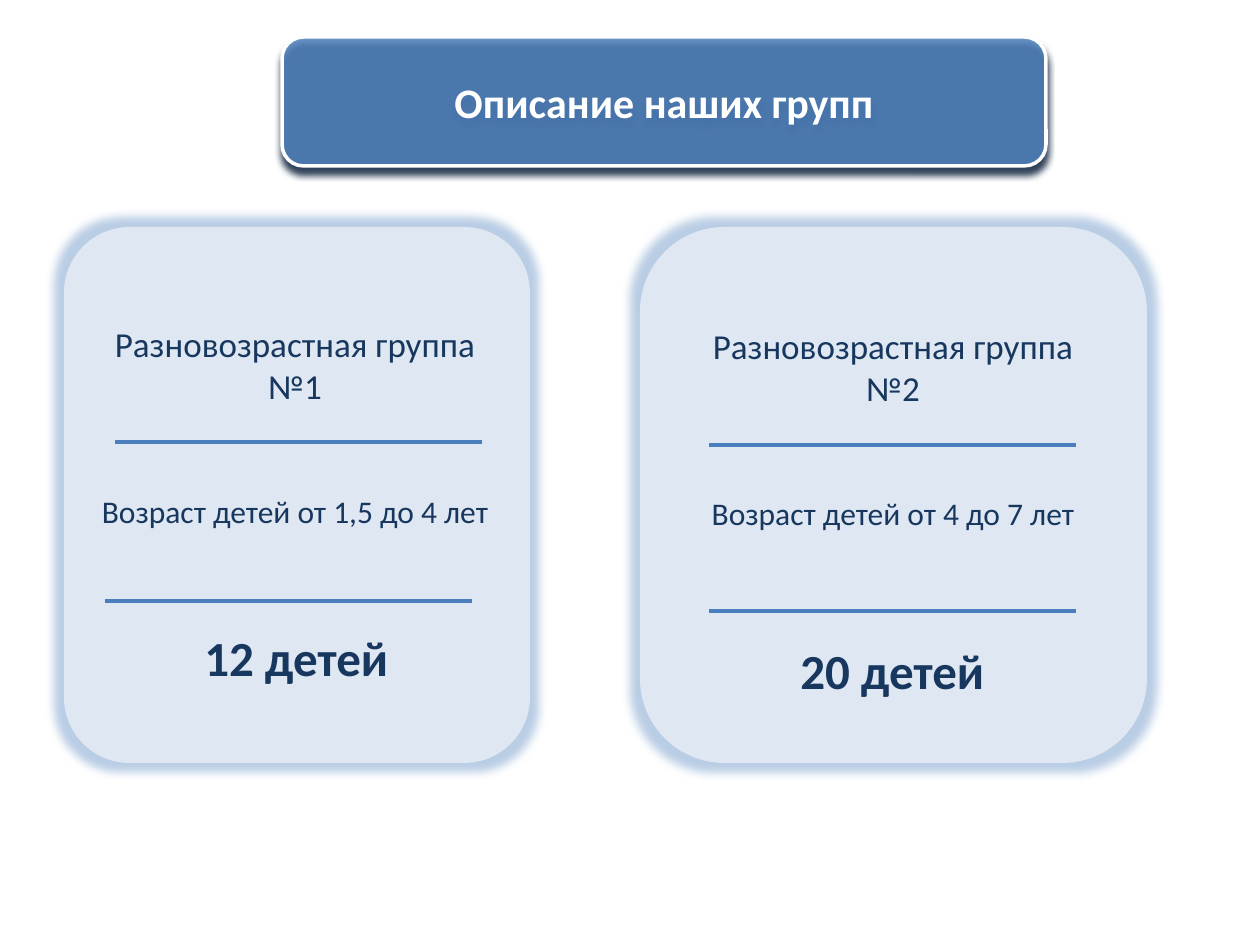
import pptx
import pptx.util
import pptx.dml.color
import pptx.enum.shapes
import pptx.enum.text
from lxml import etree

INK = {"blue": "4F81BD", "rule": "4B7EBC", "card": "F9FBFD", "glow": "B9CDE5",
       "text": "17375E", "shade": "0F243E", "white": "FFFFFF"}
TITLE = "Описание наших групп"
GROUPS = [
    {"card": (64, 227, 466, 536), "round": 0.141,
     "name": "Разновозрастная группа №1", "age": "Возраст детей от 1,5 до 4 лет",
     "info": (79, 316), "count": "12 детей", "total": (192, 621),
     "rules": [(115, 442), (105, 601)]},
    {"card": (640, 227, 507, 536), "round": 0.1667,
     "name": "Разновозрастная группа №2", "age": "Возраст детей от 4 до 7 лет",
     "info": (677, 318), "count": "20 детей", "total": (788, 634),
     "rules": [(709, 445), (709, 611)]},
]
RULE = 367
INFO = (432, 220)
TOTAL = (212, 72)
NS = "http://schemas.openxmlformats.org/drawingml/2006/main"
Pt = pptx.util.Pt
Kind = pptx.enum.shapes.MSO_SHAPE
Align = pptx.enum.text.PP_ALIGN
Anchor = pptx.enum.text.MSO_ANCHOR
Fit = pptx.enum.text.MSO_AUTO_SIZE


def px(*nums):
    return [round(n * 914400 / 126) for n in nums]


def tint(name):
    return pptx.dml.color.RGBColor.from_string(INK[name])


def node(up, tag, **vals):
    return etree.SubElement(up, f"{{{NS}}}{tag}", {k: str(v) for k, v in vals.items()})


def effect(shape, tag, color, **vals):
    """Give the shape one glow or shadow."""
    shape.shadow.inherit = False
    fx = shape._element.spPr.find(f"{{{NS}}}effectLst")
    node(node(fx, tag, **vals), "srgbClr", val=INK[color])


def panel(box, fill, alpha):
    shape = slide.shapes.add_shape(Kind.ROUNDED_RECTANGLE, *px(*box))
    shape.fill.solid()
    shape.fill.fore_color.rgb = tint(fill)
    clr = shape._element.spPr.find(f".//{{{NS}}}srgbClr")
    node(clr, "alpha", val=alpha * 1000)
    return shape


def write(para, text, size, color="text", bold=False, align=Align.CENTER):
    para.alignment = align
    run = para.add_run()
    run.text = text
    look = {"name": "Calibri", "size": Pt(size), "bold": bold}
    for key, val in look.items():
        setattr(run.font, key, val)
    run.font.color.rgb = tint(color)


def label(spot, size, wrap):
    frame = slide.shapes.add_textbox(*px(*spot, *size)).text_frame
    frame.word_wrap = wrap
    frame.auto_size = Fit.SHAPE_TO_FIT_TEXT
    return frame


def rule(x, y):
    line = slide.shapes.add_connector(
        pptx.enum.shapes.MSO_CONNECTOR.STRAIGHT, *px(x, y, x + RULE, y))
    line.line.color.rgb = tint("rule")
    line.line.width = Pt(2)
    node(line._element.spPr, "effectLst")


deck = pptx.Presentation()
deck.slide_width, deck.slide_height = px(1260, 945)
slide = deck.slides.add_slide(deck.slide_layouts[6])

head = panel((282, 37, 764, 129), "blue", 83)
head.line.color.rgb = tint("white")
head.line.width = Pt(2)
effect(head, "outerShdw", "shade", blurRad=Pt(4), dist=Pt(4), dir=5400000,
       algn="ctr", rotWithShape=0)
head.text_frame.vertical_anchor = Anchor.MIDDLE
write(head.text_frame.paragraphs[0], TITLE, 24, "white", True)

for group in GROUPS:
    card = panel(group["card"], "card", 58)
    card.adjustments[0] = group["round"]
    card.line.fill.background()
    effect(card, "glow", "glow", rad=Pt(11))

    for spot in group["rules"]:
        rule(*spot)

    info = label(group["info"], INFO, True)
    write(info.paragraphs[0], group["name"], 20)
    age = info.add_paragraph()
    age.space_before = Pt(49)
    write(age, group["age"], 18)

    total = label(group["total"], TOTAL, False)
    write(total.paragraphs[0], group["count"], 28, bold=True, align=Align.LEFT)

deck.save("out.pptx")
